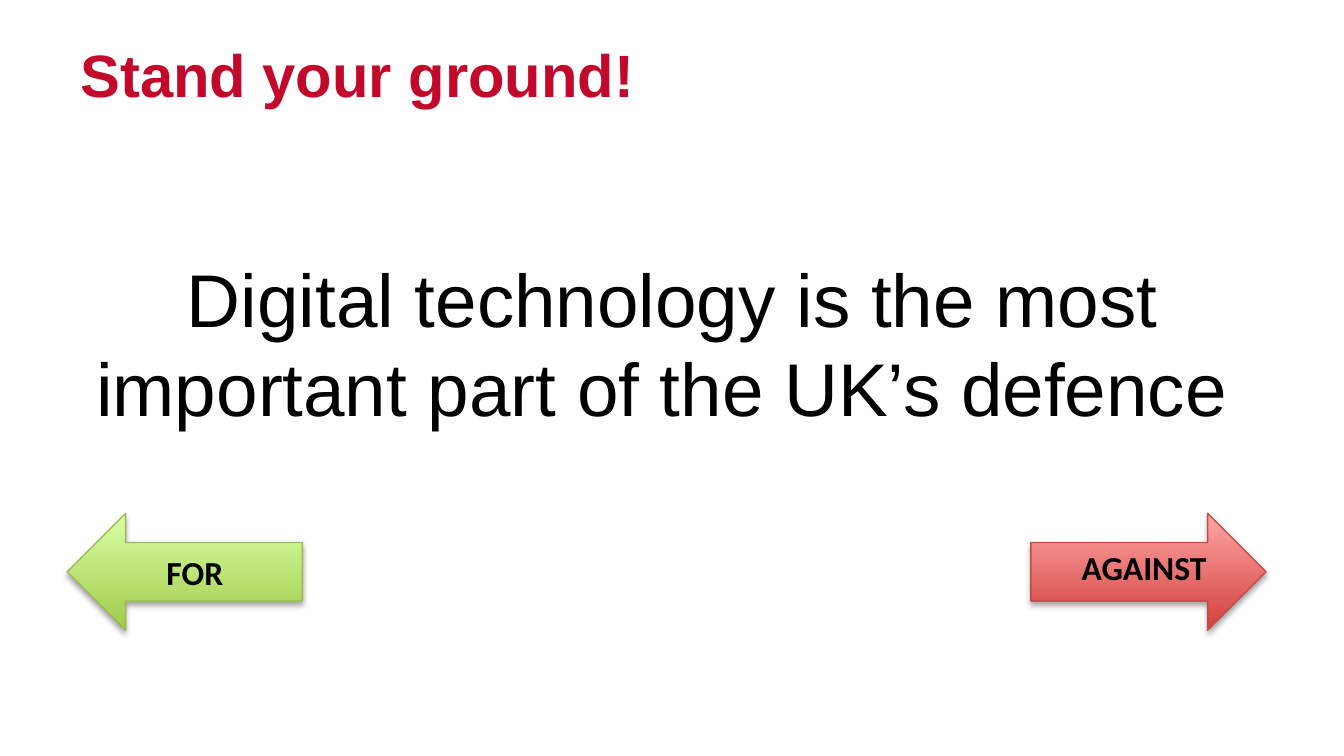
from lxml import etree
from pptx import Presentation
from pptx.dml.color import RGBColor
from pptx.enum.shapes import MSO_SHAPE
from pptx.enum.text import PP_ALIGN
from pptx.oxml import parse_xml
from pptx.util import Inches, Pt

NS = "http://schemas.openxmlformats.org/drawingml/2006/main"
TITLE = dict(name="Arial", size=Pt(32), bold=True)
STATEMENT = dict(name="Arial", size=Pt(40), bold=False)
LABEL = dict(name="Calibri", size=Pt(18), bold=True)


def rgb(value):
    """Turn a hex string into a colour."""
    return RGBColor.from_string(value)


def add_text(s, box, text, font, color="000000", align=PP_ALIGN.LEFT):
    """Place one paragraph of text in a box."""
    tf = s.shapes.add_textbox(*map(Inches, box)).text_frame
    tf.word_wrap = True
    p = tf.paragraphs[0]
    p.alignment = align
    r = p.add_run()
    r.text = text
    r.font.color.rgb = rgb(color)
    for key, value in font.items():
        setattr(r.font, key, value)


def add_shadow(sp):
    """Give a shape a soft shadow below it."""
    sp.shadow.inherit = False
    shadow = parse_xml(
        f'<a:outerShdw xmlns:a="{NS}" blurRad="{Pt(3.1)}" dist="{Pt(1.8)}" '
        'dir="5400000" rotWithShape="0"><a:srgbClr val="000000">'
        '<a:alpha val="35000"/></a:srgbClr></a:outerShdw>')
    sp.element.spPr.find(etree.QName(NS, "effectLst").text).append(shadow)


def add_vote(s, box, kind, colors, outline, label, label_box):
    """Draw an arrow with its label placed relative to the arrow's box."""
    sp = s.shapes.add_shape(kind, *map(Inches, box))
    sp.fill.gradient()
    sp.fill.gradient_angle = 90
    for stop, color in zip(sp.fill.gradient_stops, colors):
        stop.color.rgb = rgb(color)
    sp.line.color.rgb = rgb(outline)
    sp.line.width = Pt(0.75)
    add_shadow(sp)
    dx, dy, w, h = label_box
    add_text(s, (box[0] + dx, box[1] + dy, w, h), label, LABEL)


def add_debate(s, box):
    """Lay out the title, the statement and the two votes in a box."""
    x, y, w, h = box
    add_text(s, (x, y, w, 0.71), "Stand your ground!", TITLE, "C3092B")
    add_text(s, (x, y + 1.6, w, h - 1.6),
             "Digital technology is the most important part of the UK’s defence ",
             STATEMENT, align=PP_ALIGN.CENTER)
    votes = (
        (0, MSO_SHAPE.LEFT_ARROW, ("A0CA4A", "DAFFA5"), "98B955",
         "FOR", (0.64, 0.24, 0.98, 0.4)),
        (7.17, MSO_SHAPE.RIGHT_ARROW, ("D1403C", "FFA6A5"), "BF4C48",
         "AGAINST", (0.28, 0.2, 1.2, 0.4)),
    )
    for dx, *vote in votes:
        add_vote(s, (x + dx, y + 3.59, 1.75, 0.87), *vote)


def main():
    """Build and save the slide."""
    prs = Presentation()
    prs.slide_width = Inches(10)
    prs.slide_height = prs.slide_width * 9 // 16
    s = prs.slides.add_slide(prs.slide_layouts[6])
    add_debate(s, (0.5, 0.23, 9, 5.23))
    prs.save("out.pptx")


if __name__ == "__main__":
    main()
